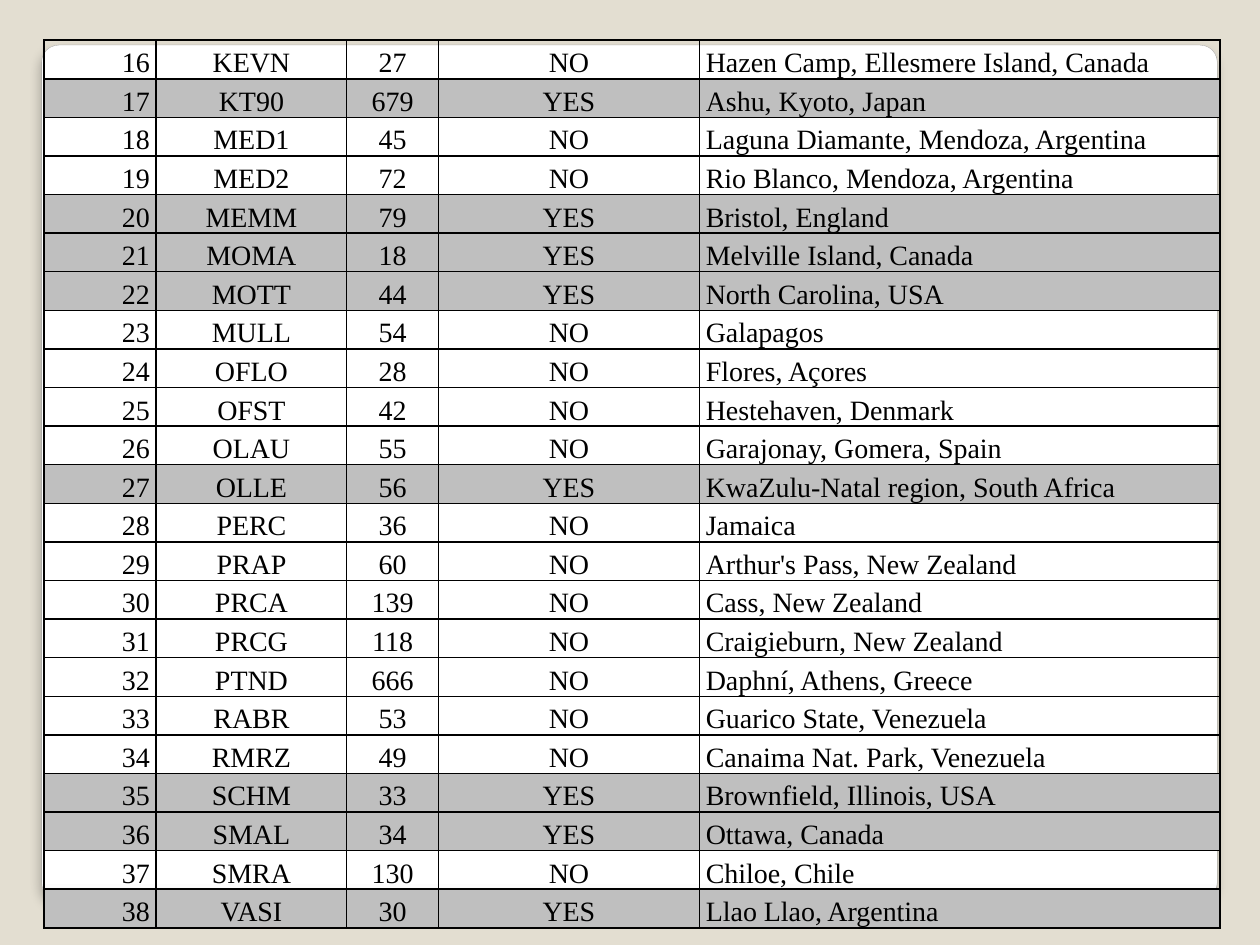
from typing import NamedTuple

from lxml.etree import SubElement as Sub
from pptx import Presentation
from pptx.dml.color import RGBColor as RGB
from pptx.enum.shapes import MSO_SHAPE as Shape
from pptx.enum.text import MSO_ANCHOR as Anchor, PP_ALIGN as Align
from pptx.oxml.ns import qn
from pptx.slide import Slide
from pptx.table import _Cell as Cell
from pptx.util import Cm, Pt

BLACK = RGB(0x00, 0x00, 0x00)
WHITE = RGB(0xFF, 0xFF, 0xFF)
SAND = RGB(0xE3, 0xDE, 0xD1)
GREY = RGB(0xBF, 0xBF, 0xBF)
EDGE = RGB(0xA4, 0xA4, 0xA4)
STOPS = (
    (0, WHITE),
    (98, WHITE),
    (99, RGB(0xF7, 0xF7, 0xF7)),
    (100, RGB(0xDA, 0xDA, 0xDA)),
)
FONT = "Times New Roman"
FIRST = 16
TALL = Cm(17.91)


class Column(NamedTuple):
    width: float
    align: Align


class Site(NamedTuple):
    code: str
    count: int
    used: str
    place: str


COLUMNS = (
    Column(2.26, Align.RIGHT),
    Column(3.84, Align.CENTER),
    Column(1.85, Align.CENTER),
    Column(5.26, Align.CENTER),
    Column(10.49, Align.LEFT),
)

SITES = (
    Site("KEVN", 27, "NO", "Hazen Camp, Ellesmere Island, Canada"),
    Site("KT90", 679, "YES", "Ashu, Kyoto, Japan"),
    Site("MED1", 45, "NO", "Laguna Diamante, Mendoza, Argentina"),
    Site("MED2", 72, "NO", "Rio Blanco, Mendoza, Argentina"),
    Site("MEMM", 79, "YES", "Bristol, England"),
    Site("MOMA", 18, "YES", "Melville Island, Canada"),
    Site("MOTT", 44, "YES", "North Carolina, USA"),
    Site("MULL", 54, "NO", "Galapagos"),
    Site("OFLO", 28, "NO", "Flores, Açores"),
    Site("OFST", 42, "NO", "Hestehaven, Denmark"),
    Site("OLAU", 55, "NO", "Garajonay, Gomera, Spain"),
    Site("OLLE", 56, "YES", "KwaZulu-Natal region, South Africa"),
    Site("PERC", 36, "NO", "Jamaica"),
    Site("PRAP", 60, "NO", "Arthur's Pass, New Zealand"),
    Site("PRCA", 139, "NO", "Cass, New Zealand"),
    Site("PRCG", 118, "NO", "Craigieburn, New Zealand"),
    Site("PTND", 666, "NO", "Daphní, Athens, Greece"),
    Site("RABR", 53, "NO", "Guarico State, Venezuela"),
    Site("RMRZ", 49, "NO", "Canaima Nat. Park, Venezuela"),
    Site("SCHM", 33, "YES", "Brownfield, Illinois, USA"),
    Site("SMAL", 34, "YES", "Ottawa, Canada"),
    Site("SMRA", 130, "NO", "Chiloe, Chile"),
    Site("VASI", 30, "YES", "Llao Llao, Argentina"),
)


def add_color(node, color: RGB):
    return Sub(node, qn("a:srgbClr"), val=str(color))


def add_panel(slide: Slide) -> None:
    panel = slide.shapes.add_shape(
        Shape.ROUNDED_RECTANGLE, Cm(0.84), Cm(0.91), Cm(23.7), Cm(17.22)
    )
    panel.adjustments[0] = 0.02
    panel.line.color.rgb = EDGE
    panel.line.width = Pt(0.16)
    panel.fill.gradient()
    panel.fill.gradient_angle = 270
    stops = panel.element.spPr.find(".//" + qn("a:gsLst"))
    stops.clear()
    for spot, color in STOPS:
        add_color(Sub(stops, qn("a:gs"), pos=str(spot * 1000)), color)

    panel.shadow.inherit = False
    effects = panel.element.spPr.find(qn("a:effectLst"))
    shadow = Sub(
        effects, qn("a:outerShdw"), blurRad=str(Pt(6)), dist=str(Pt(4)),
        dir="5400000", algn="tl", rotWithShape="0",
    )
    Sub(add_color(shadow, BLACK), qn("a:alpha"), val="25000")


def add_border(cell: Cell) -> None:
    props = cell._tc.get_or_add_tcPr()
    for side in ("lnL", "lnR", "lnT", "lnB"):
        line = Sub(props, qn(f"a:{side}"), w=str(Pt(1)))
        add_color(Sub(line, qn("a:solidFill")), BLACK)


def fill_cell(cell: Cell, text: str, align: Align, shaded: bool) -> None:
    add_border(cell)
    if shaded:
        cell.fill.solid()
        cell.fill.fore_color.rgb = GREY
    else:
        cell.fill.background()
    cell.vertical_anchor = Anchor.BOTTOM
    cell.margin_left = cell.margin_right = Cm(0.13)
    cell.margin_top = cell.margin_bottom = 0
    para = cell.text_frame.paragraphs[0]
    para.alignment = align
    para.line_spacing = 1.15
    run = para.add_run()
    run.text = text
    run.font.name = FONT
    run.font.size = Pt(16)
    run.font.color.rgb = BLACK


def add_sites(slide: Slide) -> None:
    width = Cm(sum(col.width for col in COLUMNS))
    frame = slide.shapes.add_table(
        len(SITES), len(COLUMNS), Cm(0.89), Cm(0.81), width, TALL
    )
    table = frame.table
    table.first_row = table.horz_banding = False
    for slot, col in zip(table.columns, COLUMNS):
        slot.width = Cm(col.width)
    for row, (number, site) in zip(table.rows, enumerate(SITES, FIRST)):
        row.height = TALL // len(SITES)
        for cell, col, value in zip(row.cells, COLUMNS, (number, *site)):
            fill_cell(cell, str(value), col.align, site.used == "YES")


def main() -> None:
    deck = Presentation()
    deck.slide_width, deck.slide_height = Cm(25.4), Cm(19.05)
    slide = deck.slides.add_slide(deck.slide_layouts[6])
    slide.background.fill.solid()
    slide.background.fill.fore_color.rgb = SAND
    add_panel(slide)
    add_sites(slide)
    deck.save("out.pptx")


if __name__ == "__main__":
    main()
